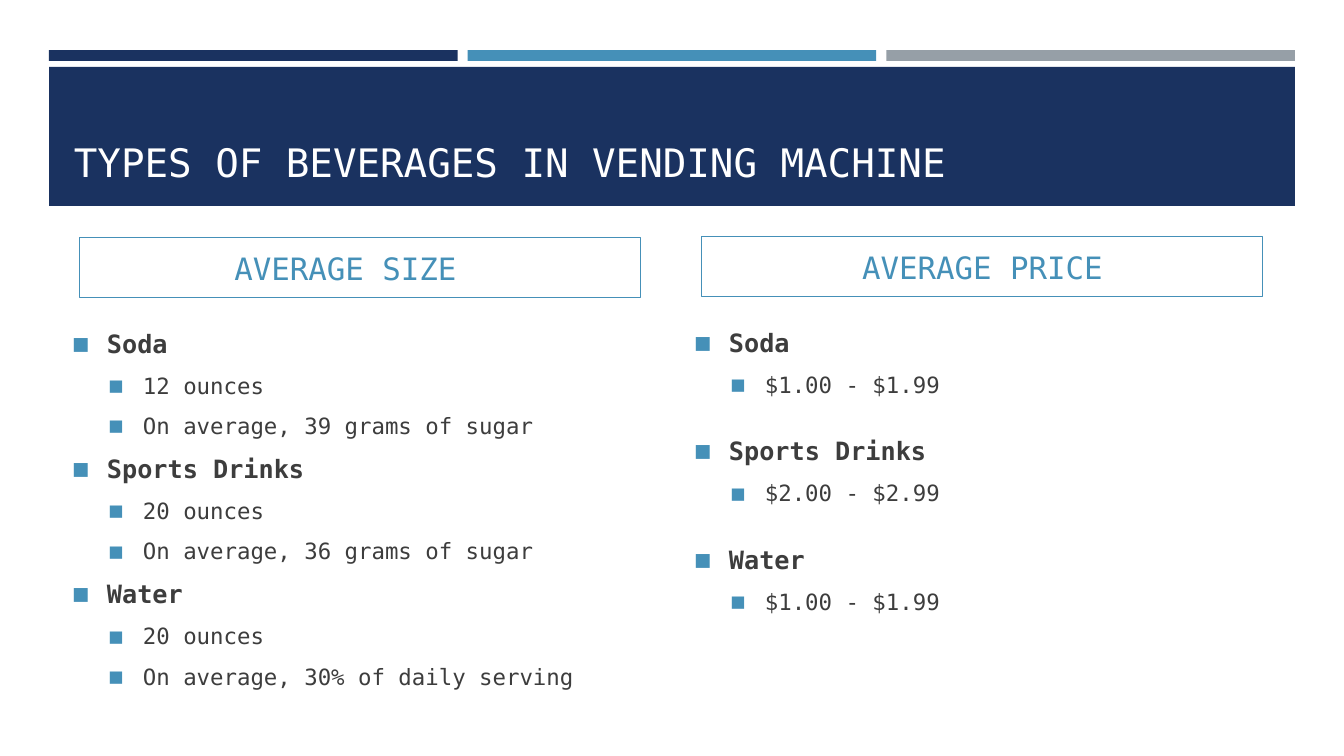
from dataclasses import dataclass
from lxml.etree import SubElement
from pptx import Presentation
from pptx.dml.color import RGBColor
from pptx.enum.shapes import MSO_SHAPE
from pptx.enum.text import MSO_ANCHOR, PP_ALIGN
from pptx.oxml.ns import qn
from pptx.util import Emu, Pt


@dataclass(frozen=True)
class Theme:
    navy: str = "1A3260"
    blue: str = "4590B8"
    gray: str = "969FA7"
    white: str = "FFFFFF"
    ink: str = "3D3D3D"
    font: str = "DejaVu Sans Mono"
    title: int = 28
    label: int = 22
    item: int = 18
    detail: int = 16


THEME = Theme()
SCALE = 914400 / 100.8

SIZES = [
    ("Soda", ["12 ounces", "On average, 39 grams of sugar"]),
    ("Sports Drinks", ["20 ounces", "On average, 36 grams of sugar"]),
    ("Water", ["20 ounces", "On average, 30% of daily serving"]),
]
PRICES = [
    ("Soda", ["$1.00 - $1.99"]),
    ("Sports Drinks", ["$2.00 - $2.99"]),
    ("Water", ["$1.00 - $1.99"]),
]


def px(n):
    return Emu(round(n * SCALE))


def rgb(color):
    return RGBColor.from_string(color)


def add_rect(slide, box, fill=None, line=None):
    rect = slide.shapes.add_shape(MSO_SHAPE.RECTANGLE, *map(px, box))
    rect.shadow.inherit = False
    if fill:
        rect.fill.solid()
        rect.fill.fore_color.rgb = rgb(fill)
    else:
        rect.fill.background()
    if line:
        rect.line.color.rgb = rgb(line)
        rect.line.width = Pt(0.75)
    else:
        rect.line.fill.background()
    return rect


def add_frame(slide, box, anchor):
    frame = slide.shapes.add_textbox(*map(px, box)).text_frame
    frame.word_wrap = True
    frame.vertical_anchor = anchor
    return frame


def set_text(para, text, size, color, bold=False):
    para.text = text
    font = para.font
    font.name, font.size, font.bold = THEME.font, Pt(size), bold
    font.color.rgb = rgb(color)


def set_bullet(para, indent):
    props = para._p.get_or_add_pPr()
    props.set("marL", str(px(indent)))
    props.set("indent", str(px(-33)))
    color = SubElement(props, qn("a:buClr"))
    SubElement(color, qn("a:srgbClr"), val=THEME.blue)
    SubElement(props, qn("a:buSzPct"), val="92000")
    SubElement(props, qn("a:buFont"), typeface=THEME.font)
    SubElement(props, qn("a:buChar"), char="■")


def add_header(slide, box, title):
    left, top, width, height = box
    # Three accent bars
    gap = 10
    bar = (width - 2 * gap) / 3
    for i, color in enumerate((THEME.navy, THEME.blue, THEME.gray)):
        add_rect(slide, (left + i * (bar + gap), top, bar, 11), color)
    # Title banner
    add_rect(slide, (left, top + 17, width, height - 17), THEME.navy)
    frame = add_frame(slide, (left + 15, top + 31, width - 30, 109),
                      MSO_ANCHOR.BOTTOM)
    set_text(frame.paragraphs[0], title, THEME.title, THEME.white)


def add_column(slide, box, label, groups, gap=0, shift=0):
    left, top, width, height = box
    # Outlined label
    rect = add_rect(slide, (left + 16, top, width - 34, 60), line=THEME.blue)
    frame = rect.text_frame
    frame.vertical_anchor = MSO_ANCHOR.MIDDLE
    frame.margin_right = px(10 + 2 * shift)
    para = frame.paragraphs[0]
    para.alignment = PP_ALIGN.CENTER
    set_text(para, label, THEME.label, THEME.blue)

    # Two-level drink list
    frame = add_frame(slide, (left, top + 85, width, height - 85),
                      MSO_ANCHOR.TOP)
    rows = [(level, text) for drink, facts in groups
            for level, text in [(0, drink)] + [(1, fact) for fact in facts]]
    for i, (level, text) in enumerate(rows):
        para = frame.add_paragraph() if i else frame.paragraphs[0]
        size = THEME.detail if level else THEME.item
        para.level = level
        extra = gap if i and not level else 0
        para.space_before = Pt(round(size * 0.23 + extra, 1))
        para.space_after = Pt(6)
        set_bullet(para, 69 if level else 33)
        set_text(para, text, size, THEME.ink, bold=not level)


def main():
    deck = Presentation()
    deck.slide_width, deck.slide_height = px(1344), px(756)
    slide = deck.slides.add_slide(deck.slide_layouts[6])
    add_header(slide, (49, 50, 1246, 156),
               "TYPES OF BEVERAGES IN VENDING MACHINE")
    add_column(slide, (64, 238, 595, 471), "AVERAGE SIZE", SIZES, shift=15)
    add_column(slide, (686, 237, 595, 458), "AVERAGE PRICE", PRICES, gap=17)
    deck.save("out.pptx")


if __name__ == "__main__":
    main()
